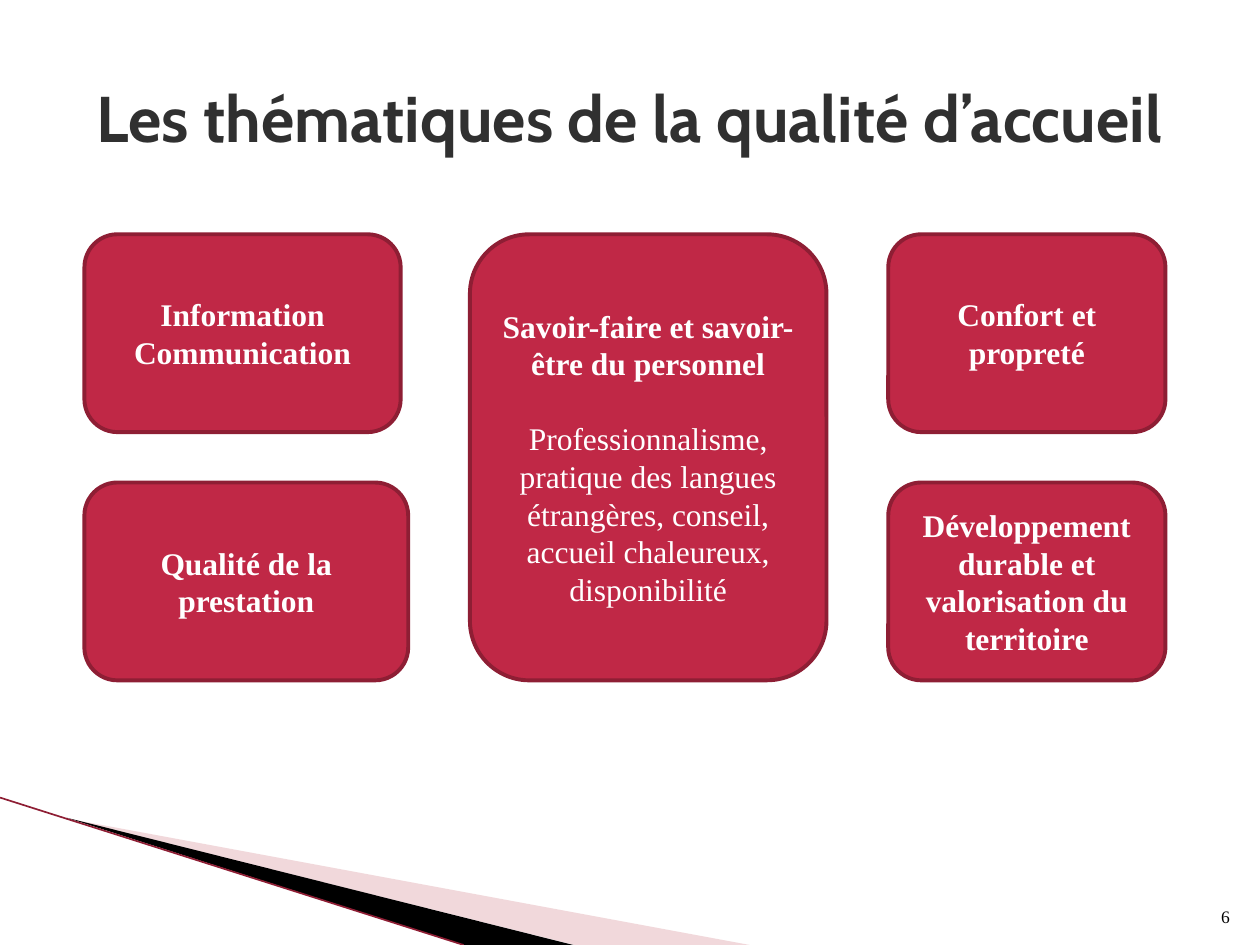
from dataclasses import dataclass

from lxml.etree import SubElement
from pptx import Presentation
from pptx.dml.color import RGBColor
from pptx.enum.shapes import MSO_CONNECTOR as Link, MSO_SHAPE as Shape
from pptx.enum.text import MSO_ANCHOR as Anchor, PP_ALIGN as Align
from pptx.oxml.ns import qn
from pptx.util import Inches, Pt

COLS, ROWS = 100, 75
WHITE = RGBColor(0xFF, 0xFF, 0xFF)
BLACK = RGBColor(0, 0, 0)
INK = RGBColor(0x30, 0x30, 0x30)
RED = RGBColor(0xC0, 0x28, 0x46)
EDGE = RGBColor(0x8E, 0x1E, 0x34)
PINK = RGBColor(0xDD, 0x9F, 0xA5)
SERIF, SANS = "Times New Roman", "Cabin"

deck = Presentation()
deck.slide_width, deck.slide_height = Inches(10), Inches(7.5)
slide = deck.slides.add_slide(deck.slide_layouts[6])
shapes = slide.shapes


@dataclass
class Area:
    col: float
    row: float
    wide: float
    high: float

    def frame(self) -> tuple:
        return (*spot(self.col, self.row), *spot(self.wide, self.high))


@dataclass
class Card:
    area: Area
    title: str
    body: str = ""


@dataclass
class Wedge:
    points: list
    color: RGBColor
    alpha: int = 100


@dataclass
class Label:
    area: Area
    text: str
    font: str
    size: float
    color: RGBColor
    bold: bool
    align: Align
    anchor: Anchor


def spot(col: float, row: float) -> tuple:
    return int(deck.slide_width * col / COLS), int(deck.slide_height * row / ROWS)


def style(para, font: str, size: float, color: RGBColor, bold: bool, align: Align) -> None:
    para.alignment = align
    for run in para.runs:
        run.font.name = font
        run.font.size = Pt(size)
        run.font.bold = bold
        run.font.color.rgb = color


def draw_wedge(wedge: Wedge) -> None:
    first, *rest = [spot(*point) for point in wedge.points]
    pen = shapes.build_freeform(*first, scale=1.0)
    pen.add_line_segments(rest, close=True)
    shape = pen.convert_to_shape()
    shape.shadow.inherit = False
    shape.fill.solid()
    shape.fill.fore_color.rgb = wedge.color
    shape.line.fill.background()
    if wedge.alpha < 100:
        tint = next(shape.fill._xPr.iter(qn("a:srgbClr")))
        SubElement(tint, qn("a:alpha")).set("val", str(wedge.alpha * 1000))


def draw_line(start: tuple, end: tuple, color: RGBColor, width: float) -> None:
    line = shapes.add_connector(Link.STRAIGHT, *spot(*start), *spot(*end))
    line.line.color.rgb = color
    line.line.width = Pt(width)
    SubElement(line._element.spPr, qn("a:effectLst"))


def draw_label(label: Label) -> None:
    frame = shapes.add_textbox(*label.area.frame()).text_frame
    frame.word_wrap = True
    frame.vertical_anchor = label.anchor
    frame.text = label.text
    style(frame.paragraphs[0], label.font, label.size, label.color, label.bold, label.align)


def draw_card(card: Card) -> None:
    box = shapes.add_shape(Shape.ROUNDED_RECTANGLE, *card.area.frame())
    box.shadow.inherit = False
    box.fill.solid()
    box.fill.fore_color.rgb = RED
    box.line.color.rgb = EDGE
    box.line.width = Pt(2.25)
    frame = box.text_frame
    frame.word_wrap = True
    frame.vertical_anchor = Anchor.MIDDLE
    frame.text = card.title
    for para in frame.paragraphs:
        style(para, SERIF, 18, WHITE, True, Align.CENTER)
    if card.body:
        para = frame.add_paragraph()
        para.text = card.body
        para.space_before = Pt(21)
        style(para, SERIF, 18, WHITE, False, Align.CENTER)


LEFT, MID, RIGHT = 6.7, 37.3, 70.5
TOP, LOW = 18.6, 38.3
HIGH, SIDE = 15.7, 22

WEDGES = [
    Wedge([(5.5, 65), (59.5, ROWS), (45.6, ROWS)], PINK, 40),
    Wedge([(5.3, 64.9), (45.5, ROWS), (36.8, ROWS)], BLACK),
]
LABELS = [
    Label(Area(94.6, 70.1, 4, 4), "6", SERIF, 10, BLACK, False, Align.RIGHT, Anchor.BOTTOM),
    Label(Area(5, 3, 90, 12.5), "Les thématiques de la qualité d’accueil",
          SANS, 36.9, INK, True, Align.CENTER, Anchor.MIDDLE),
]
CARDS = [
    Card(Area(LEFT, TOP, 25.1, HIGH), "Information\nCommunication"),
    Card(Area(LEFT, LOW, 25.7, HIGH), "Qualité de la prestation"),
    Card(Area(RIGHT, TOP, SIDE, HIGH), "Confort et propreté"),
    Card(Area(MID, TOP, 28.3, LOW + HIGH - TOP),
         "Savoir-faire et savoir-être du personnel",
         "Professionnalisme, pratique des langues étrangères, conseil, "
         "accueil chaleureux, disponibilité"),
    Card(Area(RIGHT, LOW, SIDE, HIGH),
         "Développement durable et valorisation du territoire"),
]

for wedge in WEDGES:
    draw_wedge(wedge)
draw_line((0, 63.3), (36.8, ROWS), EDGE, 0.95)
for label in LABELS:
    draw_label(label)
for card in CARDS:
    draw_card(card)

deck.save("out.pptx")
